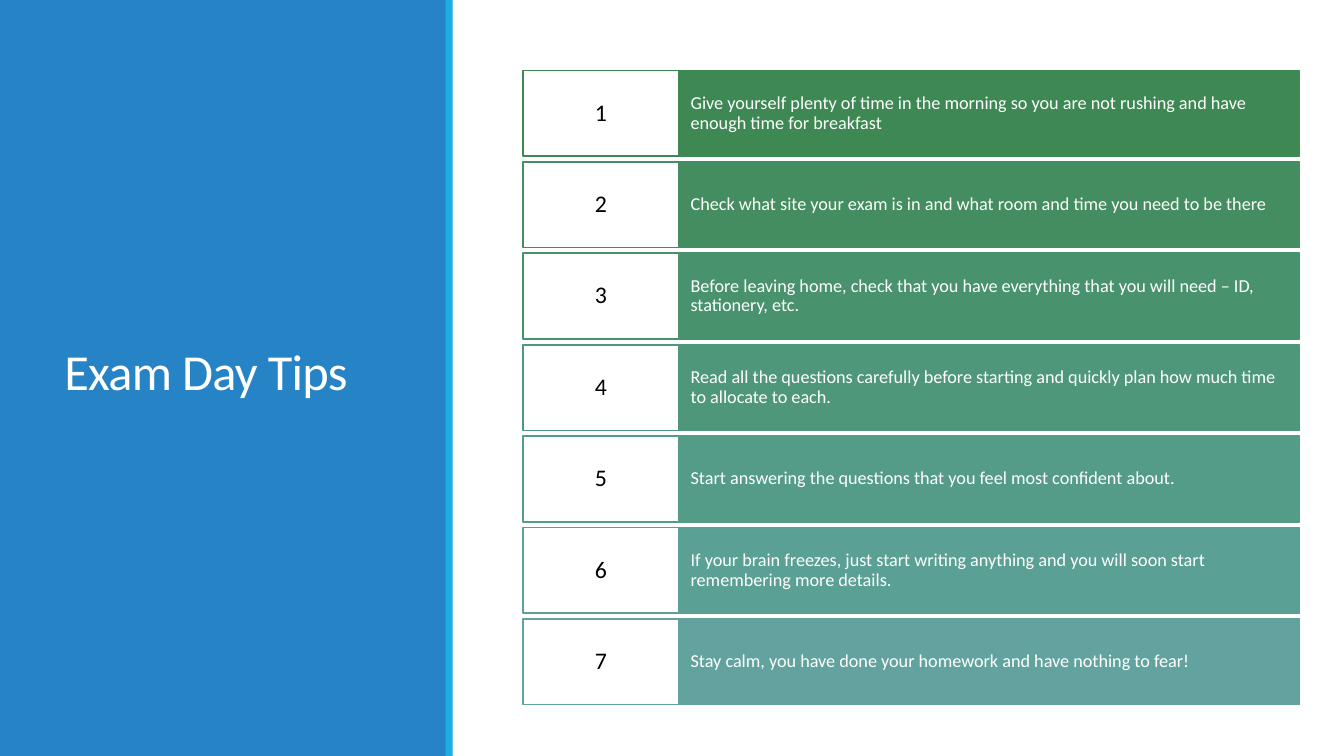
from dataclasses import dataclass

from pptx import Presentation
from pptx import util as u
from pptx.dml.color import RGBColor
from pptx.enum import shapes, text


@dataclass(frozen=True)
class Theme:
    font: str = "Calibri"
    panel: str = "2683C6"
    stripe: str = "1CADE4"
    light: str = "FFFFFF"
    dark: str = "000000"
    greens: tuple[str, ...] = ("3E8853", "438D60", "49926E", "4E977B",
                               "549C88", "5AA094", "62A39F")
    title_size: float = 36
    number_size: float = 17
    tip_size: float = 13
    outline: float = 1.25


@dataclass(frozen=True)
class Box:
    """A rectangle in inches."""
    left: float
    top: float
    width: float
    height: float

    def emu(self) -> list[int]:
        return [u.Inches(v) for v in (self.left, self.top, self.width, self.height)]


@dataclass(frozen=True)
class Grid:
    """Rows of one number column and one tip column, four times as wide."""
    left: float = 5.19
    top: float = 0.7
    unit: float = 1.54
    row_height: float = 0.85
    last_top: float = 6.14

    def cell(self, row: int, rows: int, col: int, span: int) -> Box:
        pitch = (self.last_top - self.top) / (rows - 1)
        return Box(self.left + col * self.unit, self.top + row * pitch,
                   span * self.unit, self.row_height)


@dataclass(frozen=True)
class TextStyle:
    size: float
    color: str
    align: text.PP_ALIGN
    line_spacing: float
    inset_x: float
    inset_y: float


THEME = Theme()
GRID = Grid()
WIDTH, HEIGHT = 13.33, 7.5
TITLE = TextStyle(THEME.title_size, THEME.light, text.PP_ALIGN.LEFT, 0.85, 0.1, 0.05)
NUMBER = TextStyle(THEME.number_size, THEME.dark, text.PP_ALIGN.CENTER, 0.9, 0.08, 0.08)
TIP = TextStyle(THEME.tip_size, THEME.light, text.PP_ALIGN.LEFT, 0.9, 0.12, 0.22)

TIPS = (
    "Give yourself plenty of time in the morning so you are not rushing and have "
    "enough time for breakfast",
    "Check what site your exam is in and what room and time you need to be there",
    "Before leaving home, check that you have everything that you will need – ID, "
    "stationery, etc.",
    "Read all the questions carefully before starting and quickly plan how much time "
    "to allocate to each.",
    "Start answering the questions that you feel most confident about.",
    "If your brain freezes, just start writing anything and you will soon start "
    "remembering more details.",
    "Stay calm, you have done your homework and have nothing to fear!",
)


def add_rect(slide, box: Box, fill: str, line: str | None = None):
    sp = slide.shapes.add_shape(shapes.MSO_SHAPE.RECTANGLE, *box.emu())
    sp.shadow.inherit = False
    sp.fill.solid()
    sp.fill.fore_color.rgb = RGBColor.from_string(fill)
    if line:
        sp.line.color.rgb = RGBColor.from_string(line)
        sp.line.width = u.Pt(THEME.outline)
    else:
        sp.line.fill.background()
    return sp


def write(sp, words: str, style: TextStyle):
    """Put one vertically centred paragraph in a shape and return its run."""
    tf = sp.text_frame
    tf.text = words
    tf.word_wrap = True
    tf.vertical_anchor = text.MSO_ANCHOR.MIDDLE
    tf.margin_left = tf.margin_right = u.Inches(style.inset_x)
    tf.margin_top = tf.margin_bottom = u.Inches(style.inset_y)
    p = tf.paragraphs[0]
    p.alignment = style.align
    p.line_spacing = style.line_spacing
    r = p.runs[0]
    r.font.name = THEME.font
    r.font.size = u.Pt(style.size)
    r.font.color.rgb = RGBColor.from_string(style.color)
    return r


def add_title_panel(slide) -> None:
    add_rect(slide, Box(0, 0, WIDTH / 3, HEIGHT), THEME.panel)
    title = slide.shapes.add_textbox(*Box(0.54, 0.57, 3.37, 6.31).emu())
    r = write(title, "Exam Day Tips", TITLE)
    r.font._element.set("spc", "-50")
    add_rect(slide, Box(4.42, 0, 0.07, HEIGHT), THEME.stripe)


def add_tips(slide) -> None:
    for row, (tip, green) in enumerate(zip(TIPS, THEME.greens)):
        sp = add_rect(slide, GRID.cell(row, len(TIPS), 1, 4), green, green)
        write(sp, tip, TIP)
        sp = add_rect(slide, GRID.cell(row, len(TIPS), 0, 1), THEME.light, green)
        write(sp, str(row + 1), NUMBER)


def main() -> None:
    prs = Presentation()
    prs.slide_width, prs.slide_height = u.Inches(WIDTH), u.Inches(HEIGHT)
    slide = prs.slides.add_slide(prs.slide_layouts[6])
    add_title_panel(slide)
    add_tips(slide)
    prs.save("out.pptx")


if __name__ == "__main__":
    main()
